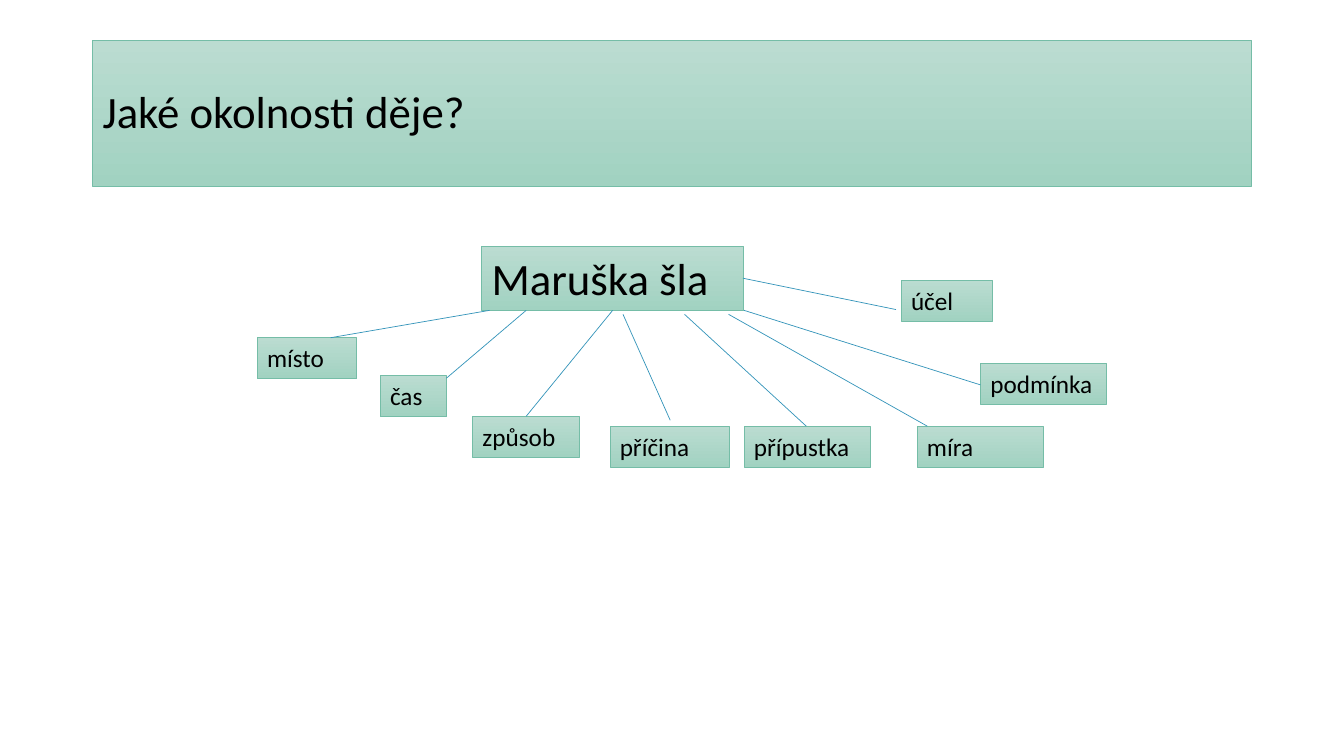
"""Builds a slide mapping the circumstances of an action around one sentence."""
import pptx
import pptx.util
import pptx.dml.color
import pptx.enum.shapes
import pptx.enum.text
import pptx.oxml.ns
import lxml.etree
from pptx.util import Cm

COLORS = {"top": "BBDCD1", "bottom": "A1D2C1", "border": "75BDA7",
          "branch": "3494BA", "text": "000000"}


def rgb(name):
    return pptx.dml.color.RGBColor.from_string(COLORS[name])


def style_box(sp, text, size):
    sp.fill.gradient()
    sp.fill.gradient_angle = 270
    for stop, name in zip(sp.fill.gradient_stops, ("top", "bottom")):
        stop.color.rgb = rgb(name)
    for stop, position in zip(sp.fill.gradient_stops, (0, 1)):
        stop.position = position
    sp.line.color.rgb = rgb("border")
    sp.line.width = pptx.util.Pt(0.5)
    tf = sp.text_frame
    tf.text = text
    tf.word_wrap = True
    p = tf.paragraphs[0]
    p.alignment = pptx.enum.text.PP_ALIGN.LEFT
    r = p.runs[0]
    r.font.name = "Calibri"
    r.font.size = pptx.util.Pt(size)
    r.font.color.rgb = rgb("text")


prs = pptx.Presentation()
prs.slide_width, prs.slide_height = Cm(33.87), Cm(19.05)
s = prs.slides.add_slide(prs.slide_layouts[5])

title = s.shapes.title
title.left, title.top, title.width, title.height = Cm(2.33), Cm(1.02), Cm(29.21), Cm(3.68)
style_box(title, "Jaké okolnosti děje?", 32)
title.text_frame.vertical_anchor = pptx.enum.text.MSO_ANCHOR.MIDDLE
title.text_frame.paragraphs[0].line_spacing = 0.9

boxes = [
    ("Maruška šla", 12.14, 6.2, 6.6, 1.63, 32),
    ("přípustka", 18.75, 10.74, 3.18, 1.03, 18),
    ("účel", 22.71, 7.06, 2.31, 1.03, 18),
    ("způsob", 11.91, 10.49, 2.69, 1.03, 18),
    ("čas", 9.58, 9.47, 1.68, 1.03, 18),
    ("místo", 6.48, 8.51, 2.51, 1.03, 18),
    ("příčina", 15.37, 10.74, 3, 1.03, 18),
    ("míra", 23.11, 10.74, 3.18, 1.03, 18),
    ("podmínka", 24.71, 9.16, 3.18, 1.03, 18),
]
for text, left, top, width, height, size in boxes:
    sp = s.shapes.add_shape(pptx.enum.shapes.MSO_SHAPE.RECTANGLE,
                            Cm(left), Cm(top), Cm(width), Cm(height))
    sp.shadow.inherit = False
    style_box(sp, text, size)
    sp.text_frame.vertical_anchor = pptx.enum.text.MSO_ANCHOR.TOP
    sp.text_frame.auto_size = pptx.enum.text.MSO_AUTO_SIZE.SHAPE_TO_FIT_TEXT

branches = [
    (12.34, 7.82, 8.33, 8.51),
    (13.26, 7.82, 11.25, 9.53),
    (15.44, 7.82, 13.26, 10.49),
    (15.7, 7.92, 16.89, 10.59),
    (17.25, 7.92, 20.32, 10.74),
    (18.36, 7.92, 23.37, 10.74),
    (18.75, 7.82, 24.71, 9.7),
    (18.72, 7.01, 22.58, 7.8),
]
for ends in branches:
    branch = s.shapes.add_connector(pptx.enum.shapes.MSO_CONNECTOR.STRAIGHT,
                                    *[Cm(v) for v in ends])
    branch.line.color.rgb = rgb("branch")
    branch.line.width = pptx.util.Pt(0.5)
    lxml.etree.SubElement(branch._element.spPr, pptx.oxml.ns.qn("a:effectLst"))

prs.save("out.pptx")
